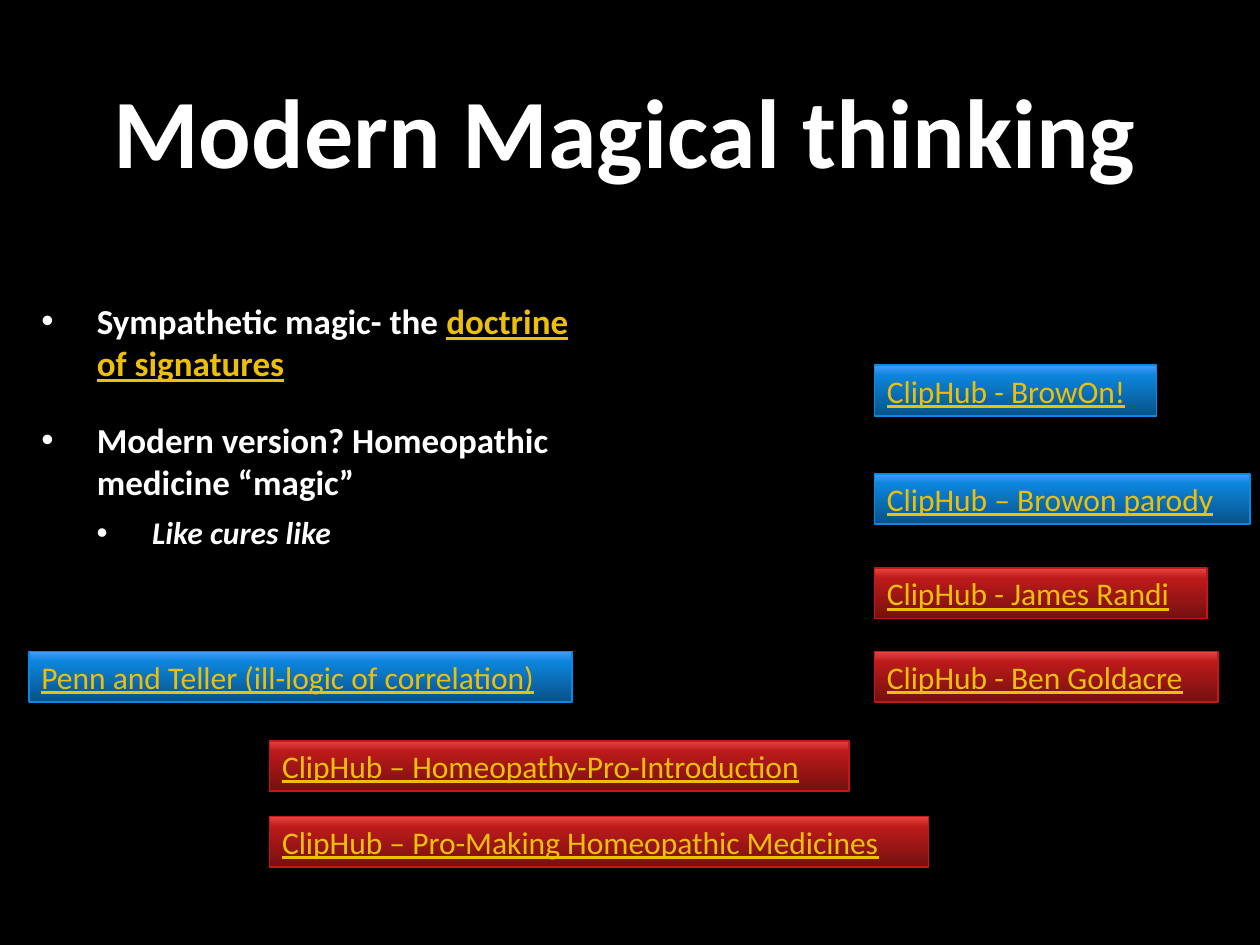
import copy
import dataclasses

import pptx
import pptx.dml.color
import pptx.enum.shapes
import pptx.enum.text
import pptx.oxml
import pptx.oxml.ns
import pptx.util

Inches = pptx.util.Inches
Pt = pptx.util.Pt
Color = pptx.dml.color.RGBColor.from_string


@dataclasses.dataclass(frozen=True)
class Theme:
    font: str = "Calibri"
    background: str = "000000"
    text: str = "FFFFFF"
    link: str = "ECBF0B"
    title_size: int = 56
    body_size: int = 20
    small_size: int = 18
    red: tuple = ("C61616", "751010", "BD1A1A", "E84545")
    blue: tuple = ("0789E6", "085288", "0C85DC", "489AFF")
    stops: tuple = (0, 0.8, 1)


THEME = Theme()

# left, top, width, colours (line, then gradient from bottom to top), wording
LINK_BUTTONS = [
    (6.94, 2.9, 2.24, THEME.blue, "ClipHub - BrowOn!"),
    (6.94, 3.76, 2.98, THEME.blue, "ClipHub – Browon parody"),
    (6.94, 4.51, 2.64, THEME.red, "ClipHub - James Randi"),
    (6.94, 5.17, 2.73, THEME.red, "ClipHub - Ben Goldacre"),
    (0.23, 5.17, 4.31, THEME.blue, "Penn and Teller (ill-logic of correlation)"),
    (2.14, 5.88, 4.6, THEME.red, "ClipHub – Homeopathy-Pro-Introduction"),
    (2.14, 6.48, 5.23, THEME.red, "ClipHub – Pro-Making Homeopathic Medicines"),
]
BUTTON_HEIGHT = 0.4


def add_span(para, text, size, bold=False, italic=False, link=False):
    span = para.add_run()
    span.text = text
    font = span.font
    font.name = THEME.font
    font.size = Pt(size)
    font.bold = bold
    font.italic = italic
    font.underline = link
    font.color.rgb = Color(THEME.link if link else THEME.text)


def add_text_box(page, left, top, width, height):
    box = page.shapes.add_textbox(Inches(left), Inches(top), Inches(width), Inches(height))
    box.text_frame.word_wrap = True
    return box.text_frame


def add_title(page, text):
    frame = add_text_box(page, 0, 0.12, 9.92, 1.81)
    frame.vertical_anchor = pptx.enum.text.MSO_ANCHOR.MIDDLE
    para = frame.paragraphs[0]
    para.alignment = pptx.enum.text.PP_ALIGN.CENTER
    add_span(para, text, THEME.title_size, bold=True)


def set_bullet(para, level, space_before):
    """Give a paragraph a hanging round bullet at its outline level."""
    indent = 0.44
    properties = para._p.get_or_add_pPr()
    properties.set("marL", str(Inches(indent * (level + 1))))
    properties.set("indent", str(Inches(-indent)))
    for tag, key, value in (("buFont", "typeface", "Arial"), ("buChar", "char", "•")):
        element = pptx.oxml.parse_xml(f"<a:{tag} {pptx.oxml.ns.nsdecls('a')}/>")
        element.set(key, value)
        properties.append(element)
    para.level = level
    para.space_before = Pt(space_before)


def add_bullets(page):
    frame = add_text_box(page, 0.23, 2.33, 4.47, 4.35)

    para = frame.paragraphs[0]
    set_bullet(para, 0, 0)
    add_span(para, "Sympathetic magic- the ", THEME.body_size, bold=True)
    add_span(para, "doctrine of signatures", THEME.body_size, bold=True, link=True)

    para = frame.add_paragraph()
    set_bullet(para, 0, 20)
    add_span(para, "Modern version? Homeopathic medicine “magic”", THEME.body_size, bold=True)

    para = frame.add_paragraph()
    set_bullet(para, 1, 6)
    add_span(para, "Like cures like", THEME.small_size, bold=True, italic=True)


def fill_gradient(shape, colors):
    """Fill a shape with three colours running from bottom to top."""
    fill = shape.fill
    fill.gradient()
    fill.gradient_angle = 90
    stop_list = shape._element.spPr.find(".//" + pptx.oxml.ns.qn("a:gsLst"))
    stop_list.append(copy.deepcopy(stop_list[-1]))
    for stop, position, color in zip(fill.gradient_stops, THEME.stops, colors):
        stop.position = position
        stop.color.rgb = Color(color)


def add_link_button(page, left, top, width, colors, text):
    button = page.shapes.add_shape(
        pptx.enum.shapes.MSO_SHAPE.RECTANGLE,
        Inches(left), Inches(top), Inches(width), Inches(BUTTON_HEIGHT),
    )
    line_color, *gradient_colors = colors
    button.shadow.inherit = False
    button.line.color.rgb = Color(line_color)
    button.line.width = Pt(1)
    fill_gradient(button, gradient_colors)
    frame = button.text_frame
    frame.word_wrap = True
    frame.vertical_anchor = pptx.enum.text.MSO_ANCHOR.TOP
    para = frame.paragraphs[0]
    para.alignment = pptx.enum.text.PP_ALIGN.LEFT
    add_span(para, text, THEME.small_size, link=True)


def main():
    deck = pptx.Presentation()
    deck.slide_width = Inches(10)
    deck.slide_height = Inches(7.5)
    page = deck.slides.add_slide(deck.slide_layouts[6])
    page.background.fill.solid()
    page.background.fill.fore_color.rgb = Color(THEME.background)

    add_title(page, "Modern Magical thinking")
    add_bullets(page)
    for button in LINK_BUTTONS:
        add_link_button(page, *button)
    deck.save("out.pptx")


if __name__ == "__main__":
    main()
